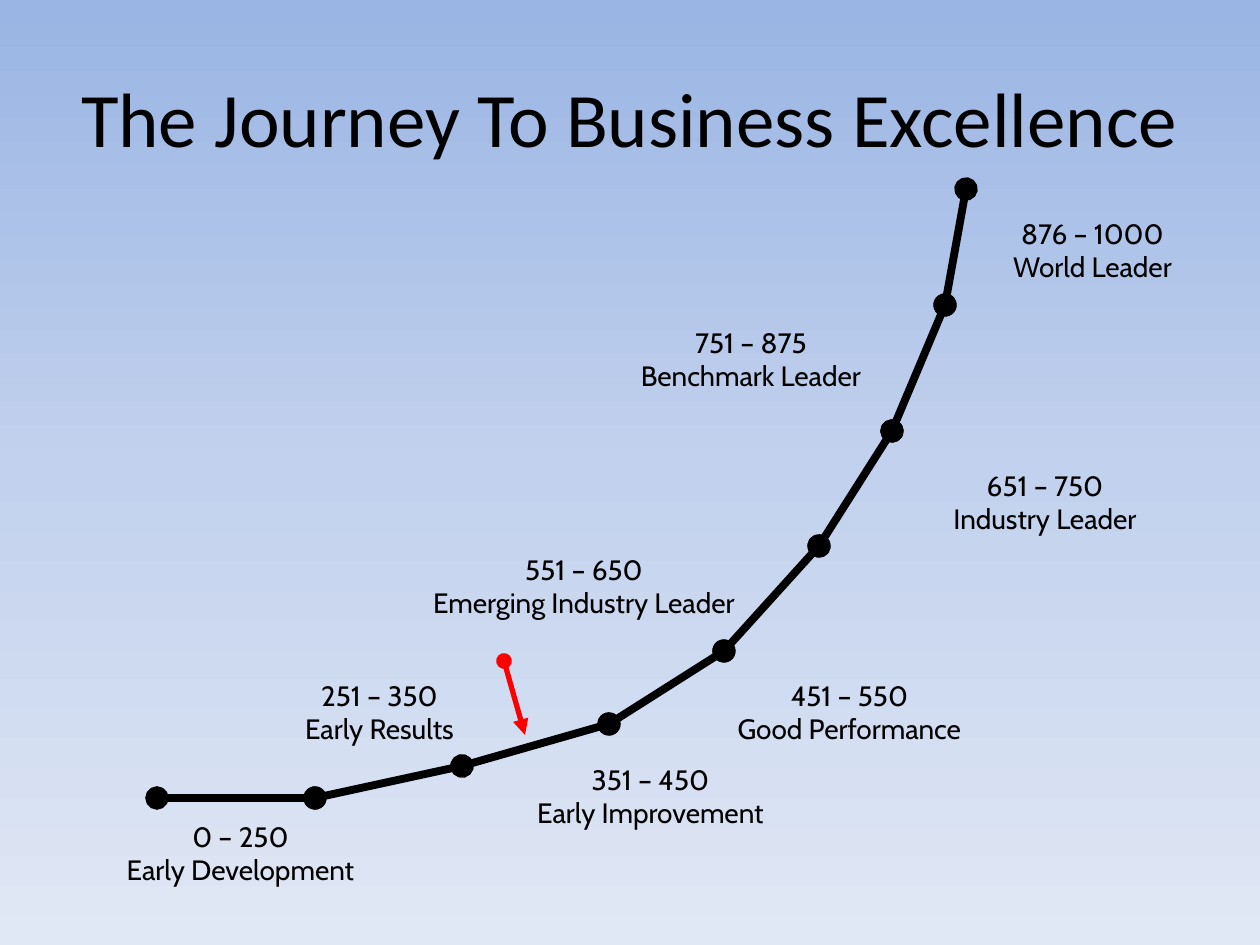
import copy
import itertools

import pptx
import pptx.dml.color
import pptx.enum.shapes
import pptx.enum.text
import pptx.oxml
import pptx.oxml.ns
import pptx.util

EMU_PER_PX = 914400 / 126
CENTER = pptx.enum.text.PP_ALIGN.CENTER


def px(*lengths):
    """Turn pixel lengths into a list of EMU."""
    return [pptx.util.Emu(round(v * EMU_PER_PX)) for v in lengths]


def rgb(hex_string):
    return pptx.dml.color.RGBColor.from_string(hex_string)


prs = pptx.Presentation()
prs.slide_width, prs.slide_height = px(1260, 945)
s = prs.slides.add_slide(prs.slide_layouts[5])

# Background: three-stop gradient from top to bottom
fill = s.background.fill
fill.gradient()
fill.gradient_angle = 270
last = fill.gradient_stops[1]._gs
last.addprevious(copy.deepcopy(last))
for stop, (position, color) in zip(
        fill.gradient_stops, [(0, "9AB5E4"), (0.5, "C2D1ED"), (1, "E1E8F5")]):
    stop.position = position
    stop.color.rgb = rgb(color)

# Title
title = s.shapes.title
title.left, title.top, title.width, title.height = px(63, 38, 1134, 157)
tf = title.text_frame
tf.text = "The Journey To Business Excellence"
tf.auto_size = pptx.enum.text.MSO_AUTO_SIZE.NONE
tf.vertical_anchor = pptx.enum.text.MSO_ANCHOR.MIDDLE
p = tf.paragraphs[0]
p.alignment = CENTER
for name, value in {"name": "Calibri", "size": pptx.util.Pt(44)}.items():
    setattr(p.runs[0].font, name, value)
p.runs[0].font.color.rgb = rgb("000000")

# Journey curve through its milestones, then the red pointer
milestones = [(157, 798), (315, 798), (462, 766), (609, 724), (724, 651),
              (819, 546), (892, 431), (945, 305), (966, 189)]
lines = [(a, b, "000000", 4.5, "oval") for a, b in itertools.pairwise(milestones)]
lines.append(((504, 661), (525, 735), "FF0000", 3, "triangle"))
for start, end, color, weight, tail in lines:
    sp = s.shapes.add_connector(
        pptx.enum.shapes.MSO_CONNECTOR.STRAIGHT, *px(*start, *end))
    sp.line.color.rgb = rgb(color)
    sp.line.width = pptx.util.Pt(weight)
    ln = sp.line._get_or_add_ln()
    for tag, kind in (("a:headEnd", "oval"), ("a:tailEnd", tail)):
        arrowhead = pptx.oxml.ns.qn(tag)
        ln.append(ln.makeelement(arrowhead, {"type": kind}))
    ln.addnext(ln.makeelement(pptx.oxml.ns.qn("a:effectLst"), {}))

# Score bands: left, top, width, range, stage
bands = [
    (103, 813, 275, "0 – 250", "Early Development"),
    (242, 672, 275, "251 – 350", "Early Results"),
    (513, 756, 275, "351 – 450", "Early Improvement"),
    (712, 672, 275, "451 – 550", "Good Performance"),
    (368, 546, 432, "551 – 650", "Emerging Industry Leader"),
    (840, 462, 410, "651 – 750", "Industry Leader"),
    (567, 319, 368, "751 – 875", "Benchmark Leader"),
    (955, 210, 275, "876 – 1000", "World Leader"),
]
band_font = {"name": "Cabin", "size": pptx.util.Pt(16)}
for left, top, width, score, stage in bands:
    tf = s.shapes.add_textbox(*px(left, top, width, 81)).text_frame
    tf.word_wrap = True
    tf.auto_size = pptx.enum.text.MSO_AUTO_SIZE.SHAPE_TO_FIT_TEXT
    tf.text = f"{score}\n{stage}"
    for p in tf.paragraphs:
        p.alignment = CENTER
        r = p.runs[0]
        for name, value in band_font.items():
            setattr(r.font, name, value)
        r.font.color.rgb = rgb("000000")

prs.save("out.pptx")
